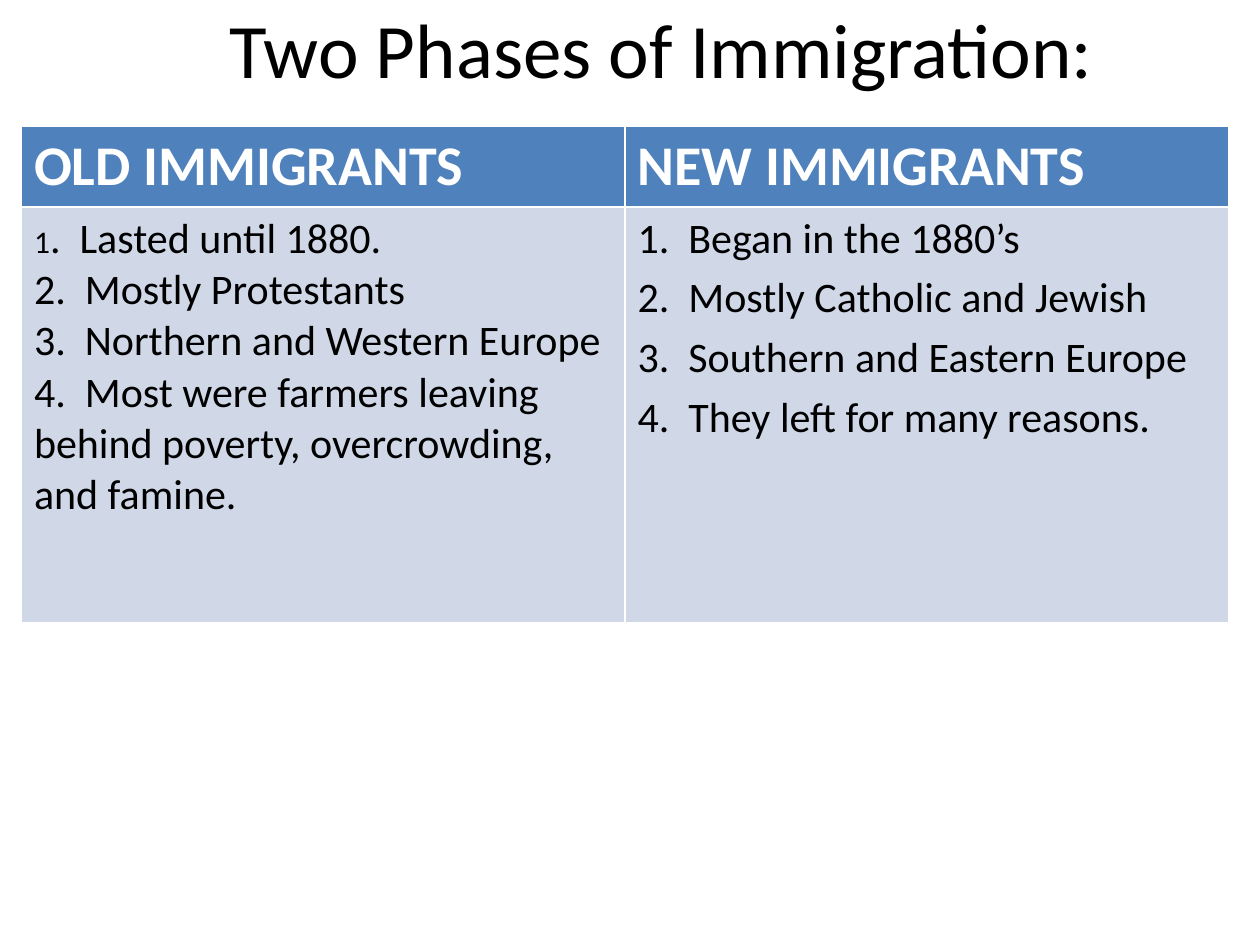
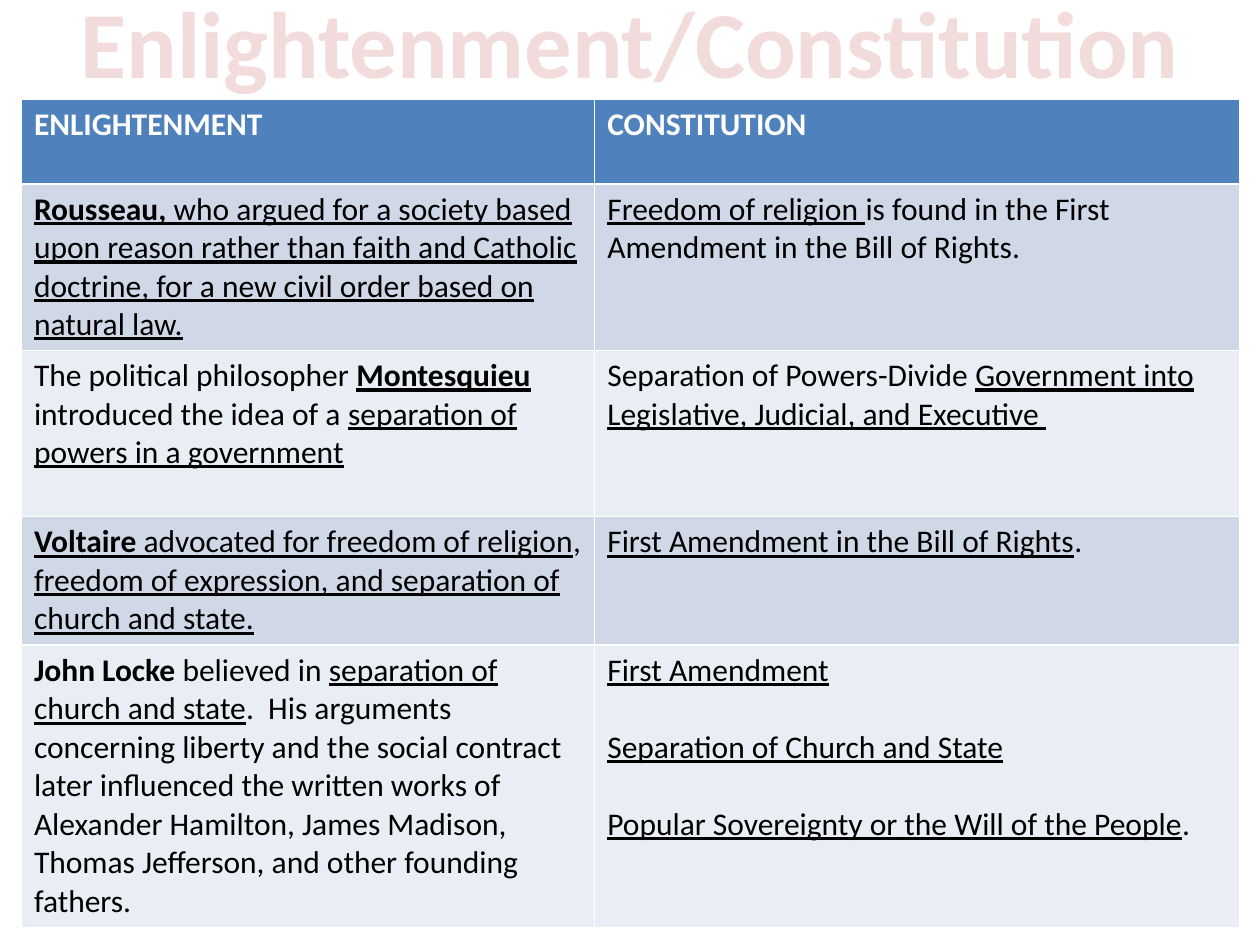
from dataclasses import dataclass

from pptx import Presentation
from pptx.dml.color import RGBColor
from pptx.enum.text import MSO_ANCHOR, MSO_AUTO_SIZE, PP_ALIGN
from pptx.util import Inches, Pt

FONT = "Calibri"
WHITE, BLACK, PINK = "FFFFFF", "000000", "F2DCDB"
HEADER_FILL = "4F81BD"
BAND_FILLS = ("D0D8E8", "E9EDF4")


@dataclass(frozen=True)
class Span:
    text: str
    bold: bool = False
    underline: bool = False
    size: float | None = None


@dataclass(frozen=True)
class Cell:
    paragraphs: tuple[tuple[Span, ...], ...]
    gap: float = 0


@dataclass(frozen=True)
class Title:
    text: str
    box: tuple[float, float, float, float]
    size: float
    color: str = BLACK
    bold: bool = False


@dataclass(frozen=True)
class Comparison:
    title: Title
    left: float
    top: float
    widths: tuple[float, ...]
    heights: tuple[float, ...]
    headings: tuple[str, ...]
    heading_size: float
    body_size: float
    rows: tuple[tuple[Cell, ...], ...]


def rgb(color: str) -> RGBColor:
    return RGBColor.from_string(color)


def under(text: str, bold: bool = False) -> Span:
    return Span(text, bold, True)


def para(*spans: Span) -> Cell:
    return Cell((spans,))


def lines(*texts: str, gap: float = 0) -> Cell:
    return Cell(tuple((Span(text),) for text in texts), gap)


def format_run(r, size: float, color: str, bold: bool, underline: bool = False) -> None:
    r.font.name = FONT
    r.font.size = Pt(size)
    r.font.color.rgb = rgb(color)
    r.font.bold = bold
    r.font.underline = underline


def add_title(s, title: Title) -> None:
    sp = s.shapes.title
    sp.left, sp.top, sp.width, sp.height = map(Inches, title.box)
    tf = sp.text_frame
    tf.text = title.text
    tf.word_wrap = True
    tf.auto_size = MSO_AUTO_SIZE.NONE
    tf.vertical_anchor = MSO_ANCHOR.MIDDLE
    p = tf.paragraphs[0]
    p.alignment = PP_ALIGN.CENTER
    format_run(p.runs[0], title.size, title.color, title.bold)


def fill_cell(target, content: Cell, size: float, color: str, fill: str) -> None:
    target.fill.solid()
    target.fill.fore_color.rgb = rgb(fill)
    tf = target.text_frame
    for i, spans in enumerate(content.paragraphs):
        p = tf.add_paragraph() if i else tf.paragraphs[0]
        p.space_before = Pt(content.gap if i else 0)
        for span in spans:
            r = p.add_run()
            r.text = span.text
            format_run(r, span.size or size, color, span.bold, span.underline)


def add_comparison(prs, spec: Comparison) -> None:
    s = prs.slides.add_slide(prs.slide_layouts[5])
    add_title(s, spec.title)
    table = s.shapes.add_table(
        len(spec.heights), len(spec.widths), Inches(spec.left), Inches(spec.top),
        Inches(sum(spec.widths)), Inches(sum(spec.heights)),
    ).table
    for column, width in zip(table.columns, spec.widths):
        column.width = Inches(width)
    for row, height in zip(table.rows, spec.heights):
        row.height = Inches(height)
    for c, heading in enumerate(spec.headings):
        fill_cell(table.cell(0, c), para(Span(heading, bold=True)),
                  spec.heading_size, WHITE, HEADER_FILL)
    for i, row in enumerate(spec.rows):
        for c, content in enumerate(row):
            fill_cell(table.cell(i + 1, c), content, spec.body_size, BLACK, BAND_FILLS[i % 2])


IMMIGRATION = Comparison(
    title=Title("Two Phases of Immigration:", (0.75, -0.25, 9, 1.25), 44),
    left=0.17,
    top=1,
    widths=(4.79, 4.79),
    heights=(0.64, 3.3),
    headings=("OLD IMMIGRANTS", "NEW IMMIGRANTS"),
    heading_size=32,
    body_size=24,
    rows=((
        Cell((
            (Span("1", size=18), Span(".  Lasted until 1880.")),
            (Span("2.  Mostly Protestants"),),
            (Span("3.  Northern and Western Europe"),),
            (Span("4.  Most were farmers leaving behind poverty, overcrowding, and famine."),),
        )),
        lines(
            "1.  Began in the 1880’s",
            "2.  Mostly Catholic and Jewish",
            "3.  Southern and Eastern Europe",
            "4.  They left for many reasons.",
            gap=4.8,
        ),
    ),),
)

ENLIGHTENMENT = Comparison(
    title=Title("Enlightenment/Constitution", (0, -0.18, 10, 1), 54, PINK, True),
    left=0.17,
    top=0.79,
    widths=(4.55, 5.12),
    heights=(0.67, 1.32, 1.32, 1.02, 2.24),
    headings=("ENLIGHTENMENT", "CONSTITUTION"),
    heading_size=18,
    body_size=18,
    rows=(
        (
            para(under("Rousseau,", True),
                 under(" who argued for a society based upon reason rather than faith "
                       "and Catholic doctrine, for a new civil order based on natural law.")),
            para(under("Freedom of religion "),
                 Span("is found in the First Amendment in the Bill of Rights.")),
        ),
        (
            para(Span("The political philosopher "), under("Montesquieu", True),
                 Span(" introduced the idea of a "),
                 under("separation of powers in a government")),
            para(Span("Separation of Powers-Divide "),
                 under("Government into Legislative, Judicial, and Executive ")),
        ),
        (
            para(under("Voltaire", True), under(" advocated for freedom of religion"), Span(", "),
                 under("freedom of expression, and separation of church and state.")),
            para(under("First Amendment in the Bill of Rights"), Span(".")),
        ),
        (
            para(Span("John Locke ", True), Span("believed in "),
                 under("separation of church and state"),
                 Span(".  His arguments concerning liberty and the social contract later "
                      "influenced the written works of Alexander Hamilton, James Madison, "
                      "Thomas Jefferson, and other founding fathers.")),
            Cell((
                (under("First Amendment"),),
                (under("Separation of Church and State"),),
                (under("Popular Sovereignty or the Will of the People"), Span(".")),
            ), gap=22),
        ),
    ),
)


def main() -> None:
    prs = Presentation()
    prs.slide_width, prs.slide_height = Inches(10), Inches(7.5)
    for spec in (IMMIGRATION, ENLIGHTENMENT):
        add_comparison(prs, spec)
    prs.save("out.pptx")


if __name__ == "__main__":
    main()
